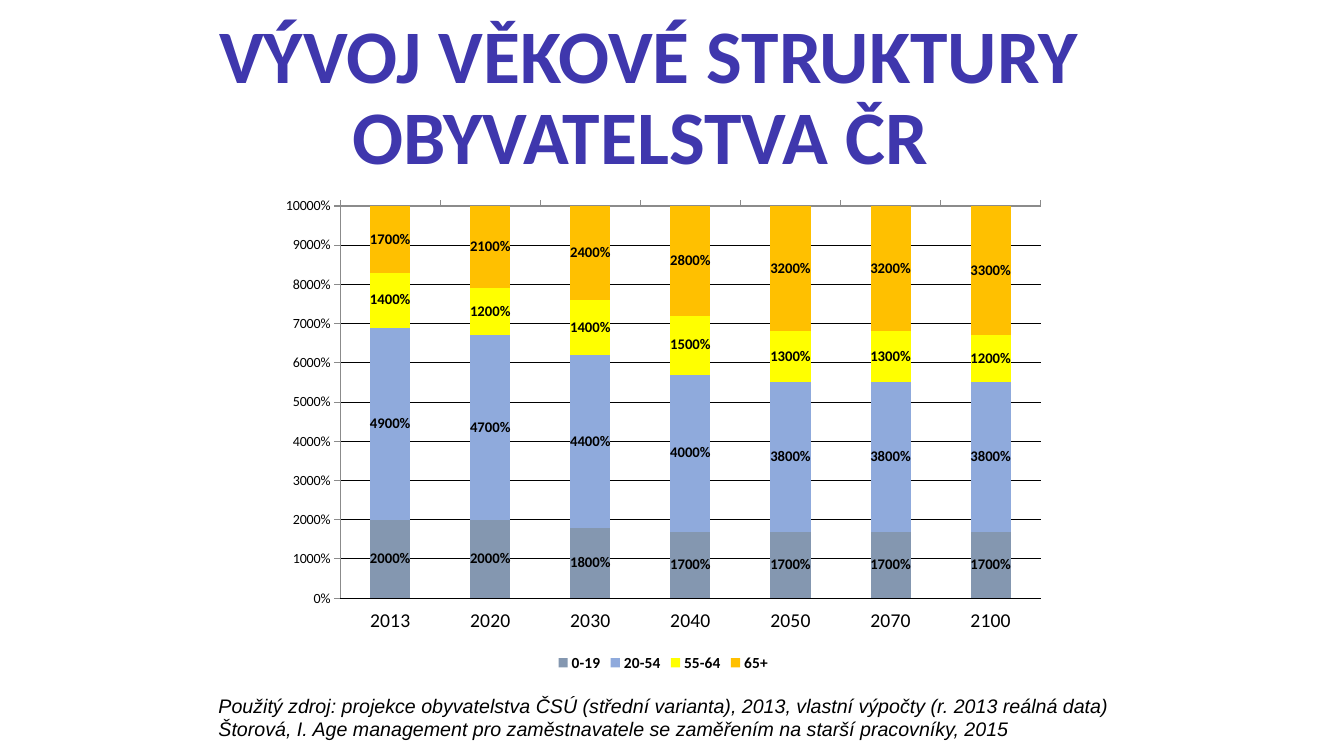
from pptx import Presentation
from pptx import util as u
from pptx.chart.data import CategoryChartData
from pptx.dml.color import RGBColor
from pptx.enum import chart as c
from pptx.enum import text as t

BLACK = RGBColor(0, 0, 0)
AXIS_GREY = RGBColor(0x8B, 0x8B, 0x8B)
TITLE_BLUE = RGBColor(0x3F, 0x37, 0xAD)
YEARS = ("2013", "2020", "2030", "2040", "2050", "2070", "2100")
AGE_GROUPS = (
    ("0-19", RGBColor(0x84, 0x97, 0xB0), (20, 20, 18, 17, 17, 17, 17)),
    ("20-54", RGBColor(0x8F, 0xAA, 0xDC), (49, 47, 44, 40, 38, 38, 38)),
    ("55-64", RGBColor(0xFF, 0xFF, 0x00), (14, 12, 14, 15, 13, 13, 12)),
    ("65+", RGBColor(0xFF, 0xC0, 0x00), (17, 21, 24, 28, 32, 32, 33)),
)
TITLE = "VÝVOJ VĚKOVÉ STRUKTURY OBYVATELSTVA ČR "
SOURCES = (
    "Použitý zdroj: projekce obyvatelstva ČSÚ (střední varianta), 2013, "
    "vlastní výpočty (r. 2013 reálná data)",
    "Štorová, I. Age management pro zaměstnavatele se zaměřením na starší pracovníky, 2015",
)


def format_font(font, size, color=BLACK, name="Calibri", bold=False, italic=False):
    """Apply one complete set of font properties."""
    font.size = u.Pt(size)
    font.color.rgb = color
    font.name = name
    font.bold = bold
    font.italic = italic


def add_text(slide, box, lines, align=t.PP_ALIGN.LEFT, anchor=t.MSO_ANCHOR.TOP,
             spacing=1.0, **font_format):
    """Add a wrapped text box with one paragraph per line."""
    frame = slide.shapes.add_textbox(*map(u.Pt, box)).text_frame
    frame.word_wrap = True
    frame.vertical_anchor = anchor
    for index, line in enumerate(lines):
        paragraph = frame.paragraphs[0] if index == 0 else frame.add_paragraph()
        paragraph.alignment = align
        paragraph.line_spacing = spacing
        run = paragraph.add_run()
        run.text = line
        format_font(run.font, **font_format)


def format_axes(chart):
    """Style both axes, with the category line at the top and its labels below."""
    for axis, size in ((chart.category_axis, 14), (chart.value_axis, 10)):
        format_font(axis.tick_labels.font, size)
        axis.format.line.color.rgb = AXIS_GREY
        axis.format.line.width = u.Pt(0.75)
        axis.major_tick_mark = c.XL_TICK_MARK.OUTSIDE
        axis.minor_tick_mark = c.XL_TICK_MARK.NONE
    chart.category_axis.tick_label_position = c.XL_TICK_LABEL_POSITION.LOW
    values = chart.value_axis
    values.minimum_scale, values.maximum_scale, values.major_unit = 0, 100, 10
    values.crosses = c.XL_AXIS_CROSSES.MAXIMUM
    values.tick_labels.number_format = "0%"
    values.tick_labels.number_format_is_linked = False
    values.has_major_gridlines = True
    values.major_gridlines.format.line.color.rgb = BLACK
    values.major_gridlines.format.line.width = u.Pt(0.75)


def add_age_chart(slide, box):
    """Add the stacked columns of age groups by year."""
    data = CategoryChartData(number_format="0%")
    data.categories = YEARS
    for name, _, shares in AGE_GROUPS:
        data.add_series(name, shares)
    chart = slide.shapes.add_chart(
        c.XL_CHART_TYPE.COLUMN_STACKED, *map(u.Pt, box), data).chart
    format_font(chart.font, 10)
    chart.has_title = False
    chart.has_legend = True
    chart.legend.position = c.XL_LEGEND_POSITION.BOTTOM
    chart.legend.include_in_layout = False
    format_font(chart.legend.font, 11, bold=True)
    format_axes(chart)
    plot = chart.plots[0]
    plot.gap_width, plot.overlap, plot.vary_by_categories = 150, 100, False
    for series, (_, color, _) in zip(plot.series, AGE_GROUPS):
        series.format.fill.solid()
        series.format.fill.fore_color.rgb = color
        labels = series.data_labels
        labels.show_value = True
        labels.number_format = "0%"
        labels.number_format_is_linked = False
        labels.position = c.XL_LABEL_POSITION.CENTER
        format_font(labels.font, 10.5, bold=True)


def build_slide(presentation):
    """Place the title, chart and sources on a blank slide."""
    slide = presentation.slides.add_slide(presentation.slide_layouts[6])
    add_age_chart(slide, (193, 134.6, 561.6, 348.5))
    add_text(slide, (149, 491.8, 676, 41), SOURCES, size=14, name="Arial", italic=True)
    add_text(slide, (120.2, 16.6, 686.2, 108.7), [TITLE], align=t.PP_ALIGN.CENTER,
             anchor=t.MSO_ANCHOR.MIDDLE, spacing=0.9, size=54, color=TITLE_BLUE, bold=True)


def main():
    """Create and save the presentation."""
    presentation = Presentation()
    presentation.slide_width, presentation.slide_height = u.Pt(960), u.Pt(540)
    build_slide(presentation)
    presentation.save("out.pptx")


if __name__ == "__main__":
    main()
